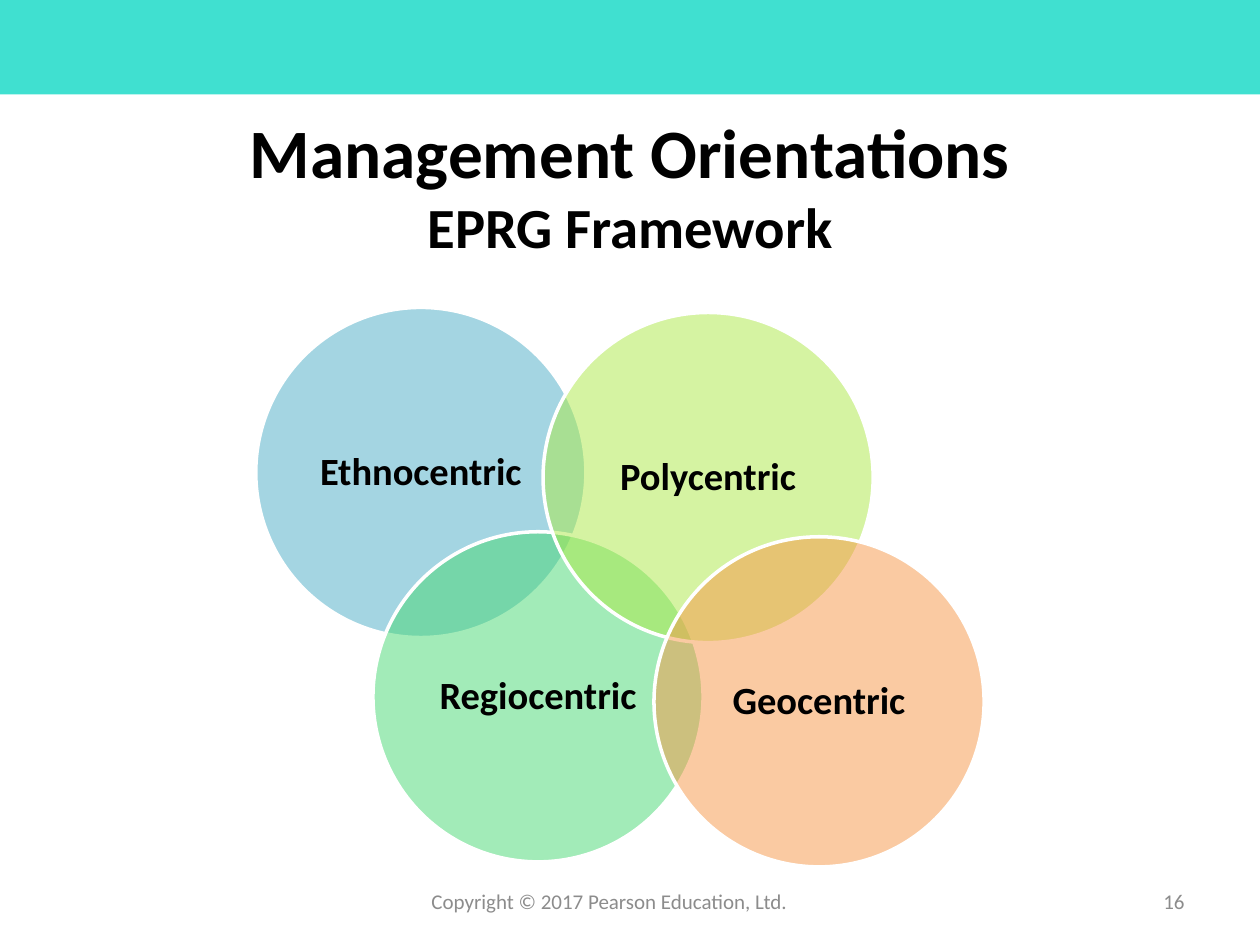
import pptx
import pptx.util
import pptx.dml.color
import pptx.enum.shapes
import pptx.enum.text
import pptx.oxml.ns
from lxml import etree

Inches = pptx.util.Inches
Pt = pptx.util.Pt
RGB = pptx.dml.color.RGBColor
Align = pptx.enum.text.PP_ALIGN
Shape = pptx.enum.shapes.MSO_SHAPE

TEAL = RGB(0x40, 0xE0, 0xD0)
BLACK = RGB(0, 0, 0)
WHITE = RGB(0xFF, 0xFF, 0xFF)
GRAY = RGB(0x8C, 0x8C, 0x8C)
BLUE = RGB(0x4B, 0xAC, 0xC6)
GREEN = RGB(0x47, 0xD8, 0x72)
LIME = RGB(0xAC, 0xE9, 0x46)
ORANGE = RGB(0xF7, 0x96, 0x46)


def style(run, size, color, bold):
    look = {"name": "Calibri", "size": Pt(size), "bold": bold}
    for key, value in look.items():
        setattr(run.font, key, value)
    run.font.color.rgb = color


def label(box, text, size, color, bold, align):
    """Put one middle-anchored line of text in a new text box."""
    frame = slide.shapes.add_textbox(*map(Inches, box)).text_frame
    frame.word_wrap = True
    frame.vertical_anchor = pptx.enum.text.MSO_ANCHOR.MIDDLE
    line = frame.paragraphs[0]
    line.alignment = align
    run = line.add_run()
    run.text = text
    style(run, size, color, bold)
    return frame


deck = pptx.Presentation()
deck.slide_width, deck.slide_height = Inches(10), Inches(7.5)
slide = deck.slides.add_slide(deck.slide_layouts[5])

# Top band, behind the title
band = slide.shapes.add_shape(Shape.RECTANGLE, 0, 0, Inches(10), Inches(0.75))
band.shadow.inherit = False
band.fill.solid()
band.fill.fore_color.rgb = TEAL
band.line.fill.background()

# Title
title = slide.shapes.title
title.left, title.top = Inches(0.5), Inches(0.84)
title.width, title.height = Inches(9), Inches(1.25)
frame = title.text_frame
frame.word_wrap = True
frame.auto_size = pptx.enum.text.MSO_AUTO_SIZE.NONE
frame.vertical_anchor = pptx.enum.text.MSO_ANCHOR.MIDDLE
head = frame.paragraphs[0]
head.alignment = Align.CENTER
for text, size in (("Management Orientations", 39.6), ("EPRG Framework", 32.4)):
    if head.runs:
        head.add_line_break()
    run = head.add_run()
    run.text = text
    style(run, size, BLACK, True)

# Footer
label((3.13, 6.95, 3.45, 0.4), "Copyright © 2017 Pearson Education, Ltd. ",
      12, GRAY, False, Align.CENTER)
label((7.17, 6.95, 2.33, 0.4), "16", 12, GRAY, False, Align.RIGHT)

# Overlapping circles, each with a label box at its centre
SIZE, INNER = 2.62, 1.85
inset = (SIZE - INNER) / 2
circles = (
    ("Ethnocentric", 2.03, 2.44, BLUE),
    ("Regiocentric", 2.96, 4.22, GREEN),
    ("Polycentric", 4.31, 2.48, LIME),
    ("Geocentric", 5.19, 4.26, ORANGE),
)
for name, left, top, color in circles:
    disc = slide.shapes.add_shape(
        Shape.OVAL, Inches(left), Inches(top), Inches(SIZE), Inches(SIZE))
    disc.shadow.inherit = False
    disc.fill.solid()
    disc.fill.fore_color.rgb = color
    tint = disc.fill._xPr.find(".//" + pptx.oxml.ns.qn("a:srgbClr"))
    etree.SubElement(tint, pptx.oxml.ns.qn("a:alpha"), val="50000")
    disc.line.color.rgb = WHITE
    disc.line.width = Pt(2)

    frame = label((left + inset, top + inset, INNER, INNER),
                  name, 22, BLACK, True, Align.CENTER)
    for side in ("left", "top", "right", "bottom"):
        setattr(frame, "margin_" + side, Inches(0.09))
    frame.paragraphs[0].line_spacing = 0.9

deck.save("out.pptx")
